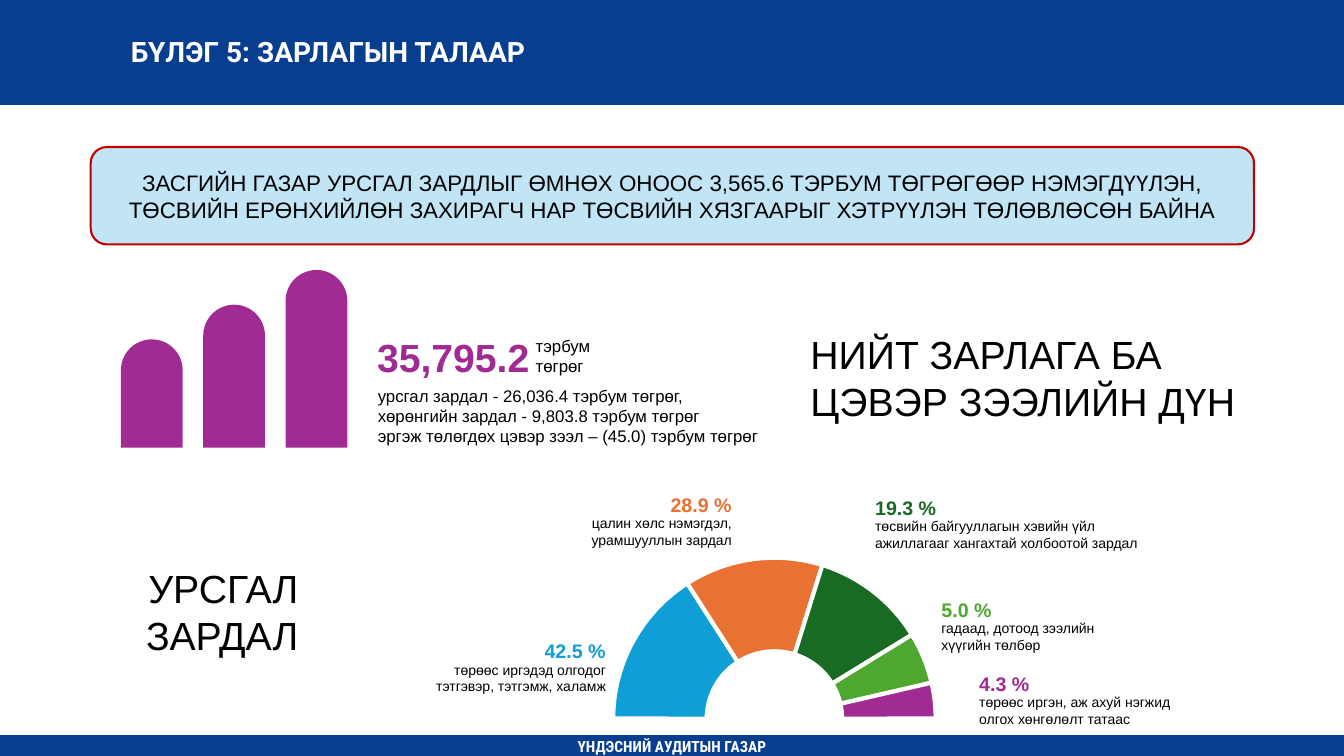
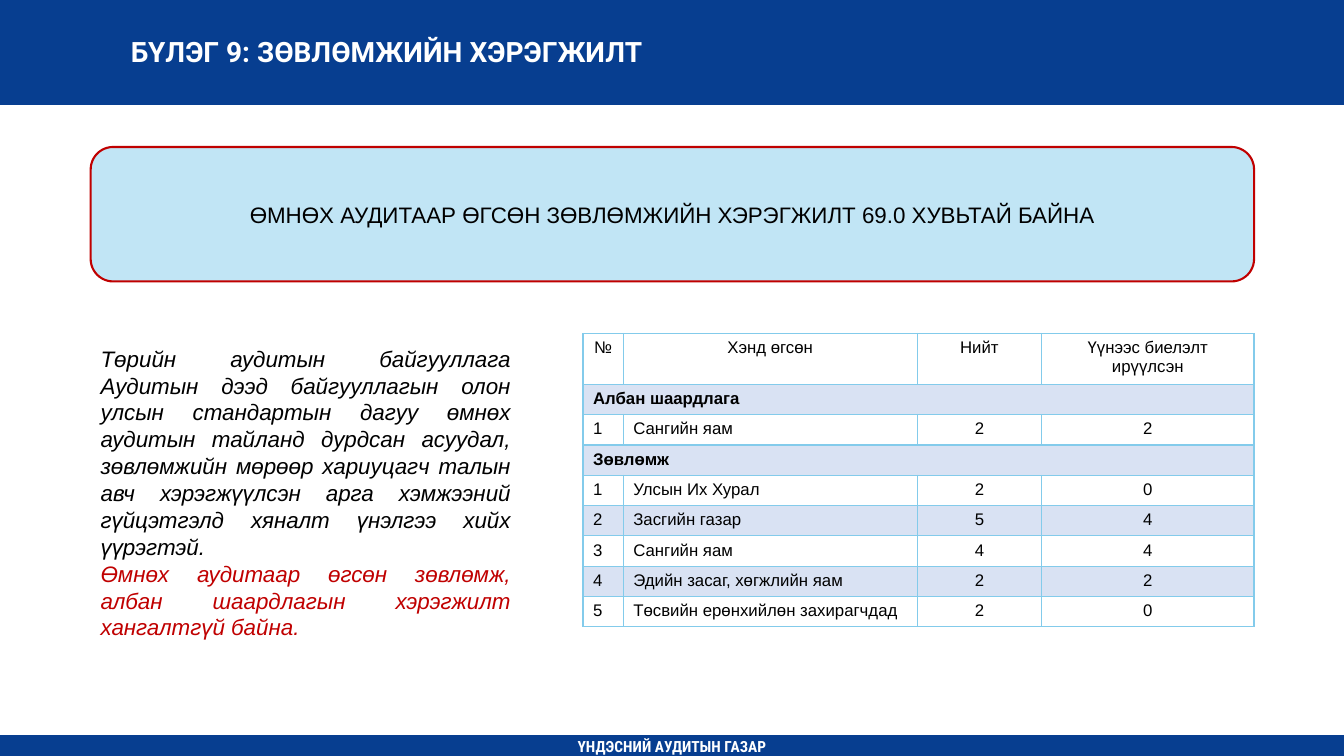
"""Build two audit slides on budget spending and the follow-up of recommendations."""
import itertools

import lxml.etree
import pptx
import pptx.dml.color
import pptx.enum.shapes
import pptx.enum.text
import pptx.oxml
import pptx.oxml.ns
import pptx.util

RGBColor = pptx.dml.color.RGBColor
NAVY = RGBColor(0x07, 0x3E, 0x90)
WHITE = RGBColor(0xFF, 0xFF, 0xFF)
BLACK = RGBColor(0x00, 0x00, 0x00)
RED = RGBColor(0xC0, 0x00, 0x00)
PALE_BLUE = RGBColor(0xC1, 0xE5, 0xF5)
PURPLE = RGBColor(0xA0, 0x2B, 0x93)
BLUE = RGBColor(0x0F, 0x9E, 0xD5)
ORANGE = RGBColor(0xE9, 0x71, 0x32)
DARK_GREEN = RGBColor(0x19, 0x6B, 0x24)
GREEN = RGBColor(0x4E, 0xA7, 0x2E)
ROW_SHADE = RGBColor(0xD9, 0xE2, 0xF3)
BORDER = RGBColor(0x83, 0xCB, 0xEB)

KINDS = pptx.enum.shapes.MSO_SHAPE
LEFT = pptx.enum.text.PP_ALIGN.LEFT
CENTER = pptx.enum.text.PP_ALIGN.CENTER
RIGHT = pptx.enum.text.PP_ALIGN.RIGHT
JUSTIFY = pptx.enum.text.PP_ALIGN.JUSTIFY

COLUMNS, ROWS = 160, 90

deck = pptx.Presentation()
deck.slide_width = pptx.util.Emu(12192000)
deck.slide_height = pptx.util.Emu(6858000)
COLUMN = deck.slide_width / COLUMNS
ROW = deck.slide_height / ROWS


def place(slide, left, top, width, height, kind=None, fill=None):
    """Place a filled shape, or a text box when no kind is given, on the grid."""
    area = [int(left * COLUMN), int(top * ROW), int(width * COLUMN), int(height * ROW)]
    if kind is None:
        shape = slide.shapes.add_textbox(*area)
    else:
        shape = slide.shapes.add_shape(kind, *area)
        shape.shadow.inherit = False
        shape.fill.solid()
        shape.fill.fore_color.rgb = fill
        shape.line.fill.background()
    shape.text_frame.word_wrap = True
    shape.text_frame.vertical_anchor = pptx.enum.text.MSO_ANCHOR.MIDDLE
    return shape


def write(frame, lines, size, color=BLACK, align=LEFT, bold=False, italic=False, font="Arial"):
    """Write each line as a paragraph with one run."""
    for index, line in enumerate(lines):
        paragraph = frame.add_paragraph() if index else frame.paragraphs[0]
        paragraph.alignment = align
        run = paragraph.add_run()
        run.text = line
        run.font.size = pptx.util.Pt(size)
        run.font.name = font
        run.font.bold = bold
        run.font.italic = italic
        run.font.color.rgb = color


chapters = [
    ("БҮЛЭГ 5: ЗАРЛАГЫН ТАЛААР", 11.6,
     "ЗАСГИЙН ГАЗАР УРСГАЛ ЗАРДЛЫГ ӨМНӨХ ОНООС 3,565.6 ТЭРБУМ ТӨГРӨГӨӨР НЭМЭГДҮҮЛЭН, "
     "ТӨСВИЙН ЕРӨНХИЙЛӨН ЗАХИРАГЧ НАР ТӨСВИЙН ХЯЗГААРЫГ ХЭТРҮҮЛЭН ТӨЛӨВЛӨСӨН БАЙНА"),
    ("БҮЛЭГ 9: ЗӨВЛӨМЖИЙН ХЭРЭГЖИЛТ", 16,
     "ӨМНӨХ АУДИТААР ӨГСӨН ЗӨВЛӨМЖИЙН ХЭРЭГЖИЛТ 69.0 ХУВЬТАЙ БАЙНА"),
]
for title, message_height, message in chapters:
    slide = deck.slides.add_slide(deck.slide_layouts[6])
    place(slide, 0, 0, COLUMNS, 12.5, KINDS.RECTANGLE, NAVY)
    place(slide, 0, 87.5, COLUMNS, 2.5, KINDS.RECTANGLE, NAVY)
    footer = place(slide, 0, 87.1, COLUMNS, 3.5)
    write(footer.text_frame, ["ҮНДЭСНИЙ АУДИТЫН ГАЗАР"], 11, WHITE, CENTER, bold=True,
          font="Roboto Condensed")
    heading = place(slide, 14.4, 3.5, 110, 5.3)
    write(heading.text_frame, [title], 20, WHITE, bold=True, font="Roboto")
    key_message = place(slide, 10.8, 17.5, 138.5, message_height,
                        KINDS.ROUNDED_RECTANGLE, PALE_BLUE)
    key_message.line.color.rgb = RED
    key_message.line.width = pptx.util.Pt(1.5)
    write(key_message.text_frame, [message], 16, align=CENTER)

spending, follow_up = deck.slides

for step in range(3):
    bar_height = 12.9 + 4.13 * step
    bar = place(spending, 14.4 + 9.8 * step, 53.3 - bar_height, 7.35, bar_height,
                KINDS.ROUND_2_SAME_RECTANGLE, PURPLE)
    bar.adjustments[0] = 0.5

spending_texts = [
    ((43.7, 40.6, 22.2, 3.7), ["35,795.2"], 28, PURPLE, LEFT, True),
    ((62.6, 39.4, 12.5, 6), ["тэрбум төгрөг"], 12, BLACK, LEFT, False),
    ((43.8, 44.6, 49, 9.8),
     ["урсгал зардал - 26,036.4 тэрбум төгрөг,",
      "хөрөнгийн зардал - 9,803.8 тэрбум төгрөг",
      "эргэж төлөгдөх цэвэр зээл – (45.0) тэрбум төгрөг"], 12, BLACK, LEFT, False),
    ((15.5, 66.5, 21.2, 12.5), ["УРСГАЛ", "ЗАРДАЛ"], 28, BLACK, RIGHT, False),
    ((95.3, 38.7, 56, 12.5), ["НИЙТ ЗАРЛАГА БА", "ЦЭВЭР ЗЭЭЛИЙН ДҮН"], 28, BLACK, LEFT, False),
]
for area, lines, size, color, align, bold in spending_texts:
    write(place(spending, *area).text_frame, lines, size, color, align, bold)

shares = [
    ("42.5 %", "төрөөс иргэдэд олгодог тэтгэвэр, тэтгэмж, халамж", BLUE, 50, 75.1, 23.3, RIGHT),
    ("28.9 %", "цалин хөлс нэмэгдэл, урамшууллын зардал", ORANGE, 68.9, 57.7, 19.4, RIGHT),
    ("19.3 %", "төсвийн байгууллагын хэвийн үйл ажиллагааг хангахтай холбоотой зардал",
     DARK_GREEN, 103, 58, 34.4, LEFT),
    ("5.0 %", "гадаад, дотоод зээлийн хүүгийн төлбөр", GREEN, 110.9, 70.2, 24.7, LEFT),
    ("4.3 %", "төрөөс иргэн, аж ахуй нэгжид олгох хөнгөлөлт татаас",
     PURPLE, 115.4, 79, 28.6, LEFT),
]
slice_angles = itertools.pairwise([180.2, 237.3, 287.3, 328.5, 347, 359.8])
for share, (start, end) in zip(shares, slice_angles):
    percent, purpose, color, left, top, width, align = share
    arc = place(spending, 73, 66.4, 38.4, 38.4, KINDS.BLOCK_ARC, color)
    arc.line.color.rgb = WHITE
    arc.line.width = pptx.util.Pt(3)
    arc.adjustments[0] = start * 0.6
    arc.adjustments[1] = end * 0.6
    arc.adjustments[2] = 0.29
    write(place(spending, left, top, width, 4.8).text_frame, [percent], 14, color, align, True)
    write(place(spending, left, top + 2.8, width, 5.6).text_frame, [purpose], 10, align=align)

duty = place(follow_up, 10.8, 39.7, 51.2, 37.9).text_frame
write(duty, [
    "Төрийн аудитын байгууллага Аудитын дээд байгууллагын олон улсын стандартын дагуу "
    "өмнөх аудитын тайланд дурдсан асуудал, зөвлөмжийн мөрөөр хариуцагч талын авч "
    "хэрэгжүүлсэн арга хэмжээний гүйцэтгэлд хяналт үнэлгээ хийх үүрэгтэй.",
    "Өмнөх аудитаар өгсөн зөвлөмж, албан шаардлагын хэрэгжилт хангалтгүй байна.",
], 16, align=JUSTIFY, italic=True)
duty.paragraphs[1].runs[0].font.color.rgb = RED

records = [
    ("№", "Хэнд өгсөн", "Нийт", "Үүнээс биелэлт ирүүлсэн"),
    ("Албан шаардлага",),
    ("1", "Сангийн яам", "2", "2"),
    ("Зөвлөмж",),
    ("1", "Улсын Их Хурал", "2", "0"),
    ("2", "Засгийн газар", "5", "4"),
    ("3", "Сангийн яам", "4", "4"),
    ("4", "Эдийн засаг, хөгжлийн яам", "2", "2"),
    ("5", "Төсвийн ерөнхийлөн захирагчдад", "2", "0"),
]
column_spans = [4.8, 35, 14.8, 25.3]
row_spans = [6.05] + [3.61] * (len(records) - 1)
results = follow_up.shapes.add_table(
    len(records), len(column_spans), int(69.4 * COLUMN), int(39.7 * ROW),
    int(sum(column_spans) * COLUMN), int(sum(row_spans) * ROW)).table
results.first_row = False
results.horz_banding = False
for column, span in zip(results.columns, column_spans):
    column.width = int(span * COLUMN)

for row_index, record in enumerate(records):
    results.rows[row_index].height = int(row_spans[row_index] * ROW)
    is_section = len(record) == 1
    is_shaded = is_section or record[0] in ("2", "4")
    if is_section:
        results.cell(row_index, 0).merge(results.cell(row_index, len(column_spans) - 1))
    for column_index in range(len(column_spans)):
        cell = results.cell(row_index, column_index)
        properties = cell._tc.get_or_add_tcPr()
        for side in ("a:lnL", "a:lnR", "a:lnT", "a:lnB"):
            edge = lxml.etree.SubElement(properties, pptx.oxml.ns.qn(side), w="12700")
            paint = lxml.etree.SubElement(edge, pptx.oxml.ns.qn("a:solidFill"))
            lxml.etree.SubElement(paint, pptx.oxml.ns.qn("a:srgbClr"), val=str(BORDER))
        if is_shaded:
            cell.fill.solid()
            cell.fill.fore_color.rgb = ROW_SHADE
        else:
            cell.fill.background()
        if column_index < len(record):
            align = CENTER if row_index == 0 or column_index > 1 else LEFT
            write(cell.text_frame, [record[column_index]], 12, align=align, bold=is_section)

deck.save("out.pptx")
